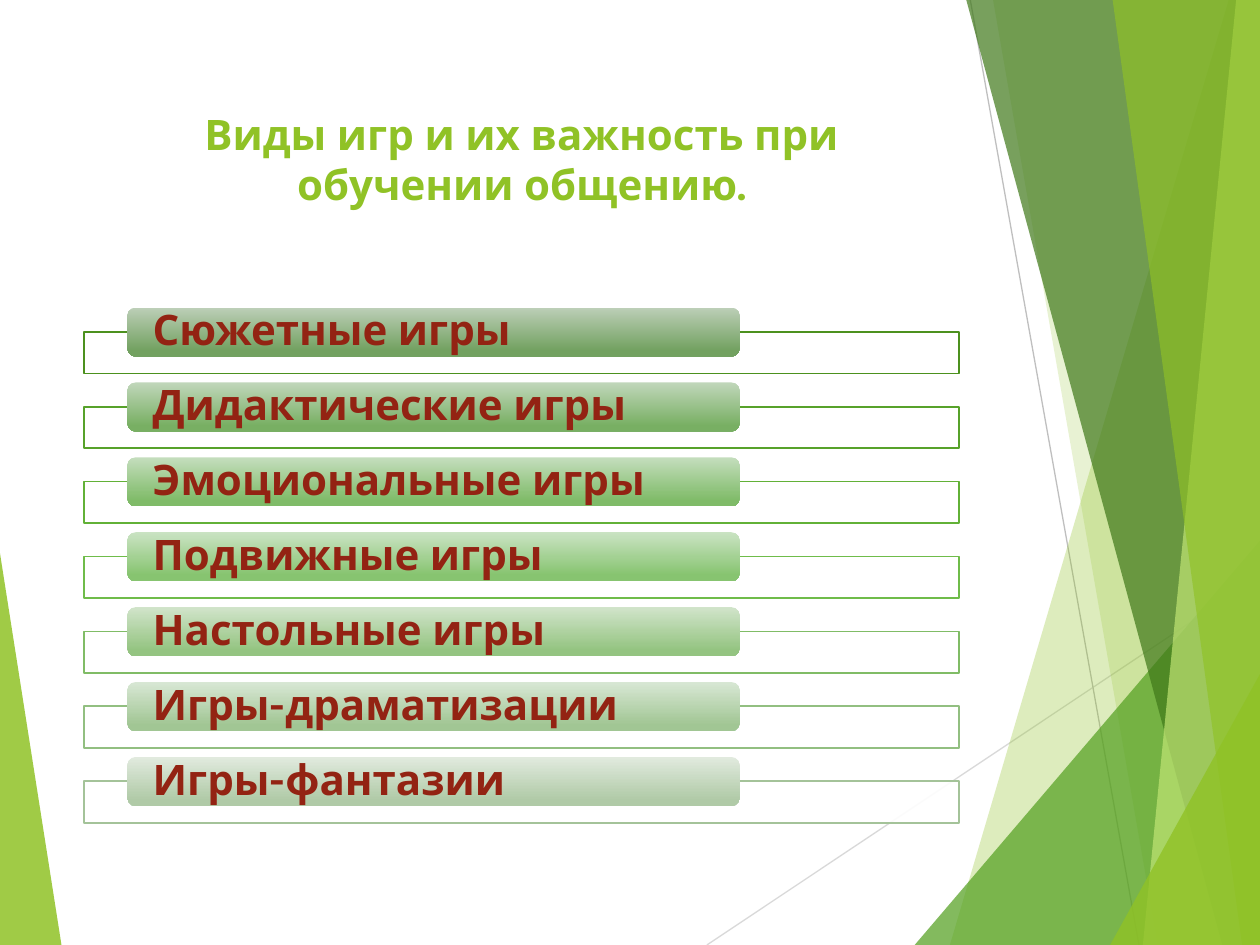
import pptx
import pptx.util
import pptx.dml.color
import pptx.enum.shapes
import pptx.enum.text
import pptx.oxml
import pptx.oxml.ns
from pptx.util import Cm

WIDTH, HEIGHT = 25.4, 19.05

THEME = {
    "font": "Karla",
    "size": 24,
    "title": "90C226",
    "bar_text": "932313",
    "frame": "FFFFFF",
    "lime": "90C226",
    "green": "54A021",
    "forest": "3F7819",
    "pale": "C0E474",
    "light_line": "D9D9D9",
    "grey_line": "BFBFBF",
    "thin": 0.75,
    "outline": 1,
}

TITLE = "Виды игр и их важность при обучении общению."

GAMES = [
    ("Сюжетные игры", "4C911E", "BDCFB8", "72A160"),
    ("Дидактические игры", "57A22A", "C1D7BB", "78AF63"),
    ("Эмоциональные игры", "62B137", "C5DEBE", "7FBB68"),
    ("Подвижные игры", "6FBC4A", "CAE3C3", "87C470"),
    ("Настольные игры", "80BC66", "D1E4CA", "94C481"),
    ("Игры-драматизации", "92BF81", "D8E7D4", "A1C694"),
    ("Игры-фантазии", "A4C399", "E1EADE", "B0CAA7"),
]

LEFT_FACET = ([(0, 11.15), (1.24, HEIGHT), (0, HEIGHT)], "lime", 85)

RAYS = [
    ((14.25, HEIGHT), (WIDTH, 11.61), "light_line"),
    ((19.56, 0), (22.96, HEIGHT), "grey_line"),
]


def band(top, bottom):
    return [(top, 0), (bottom, HEIGHT), (WIDTH, HEIGHT), (WIDTH, 0)]


def corner(left, top):
    return [(left, HEIGHT), (WIDTH, top), (WIDTH, HEIGHT)]


RIGHT_FACETS = [
    (band(24.77, 19.15), "lime", 30),
    (band(20.02, 23.34), "lime", 20),
    (corner(18.44, 10.9), "green", 72),
    (band(19.48, 24.64), "forest", 70),
    (band(24.92, 23.04), "pale", 70),
    (band(22.43, 25.04), "lime", 65),
    (corner(22.38, 13.59), "lime", 80),
]

CONTENT_LEFT, CONTENT_WIDTH = 1.7, 17.63
TITLE_TOP, TITLE_HEIGHT, TITLE_BOTTOM_INSET = 1.7, 3.66, 1.14
FIRST_BAR_TOP, ROW_PITCH = 6.2, 1.51
BAR_LEFT, BAR_WIDTH, BAR_HEIGHT = 2.57, 12.34, 0.99
FRAME_OFFSET, FRAME_HEIGHT = 0.49, 0.84


def rgb(value):
    return pptx.dml.color.RGBColor.from_string(value)


def fill_solid(shape, color, opacity):
    shape.shadow.inherit = False
    shape.fill.solid()
    shape.fill.fore_color.rgb = rgb(color)
    color_element = shape.fill._xPr.find(".//" + pptx.oxml.ns.qn("a:srgbClr"))
    alpha = pptx.oxml.parse_xml(
        f'<a:alpha {pptx.oxml.ns.nsdecls("a")} val="{opacity * 1000}"/>'
    )
    color_element.append(alpha)


def format_text(paragraph, color):
    for run in paragraph.runs:
        run.font.name = THEME["font"]
        run.font.size = pptx.util.Pt(THEME["size"])
        run.font.bold = True
        run.font.color.rgb = rgb(color)


def add_facet(slide, points, color, opacity):
    corners = [(Cm(x), Cm(y)) for x, y in points]
    builder = slide.shapes.build_freeform(*corners[0])
    builder.add_line_segments(corners[1:], close=True)
    shape = builder.convert_to_shape()
    fill_solid(shape, THEME[color], opacity)
    shape.line.fill.background()


def add_ray(slide, start, end, color):
    connector = slide.shapes.add_connector(
        pptx.enum.shapes.MSO_CONNECTOR.STRAIGHT, *map(Cm, start + end)
    )
    connector.line.color.rgb = rgb(THEME[color])
    connector.line.width = pptx.util.Pt(THEME["thin"])
    effects = pptx.oxml.parse_xml(f'<a:effectLst {pptx.oxml.ns.nsdecls("a")}/>')
    connector._element.spPr.append(effects)


def set_title(slide):
    title = slide.shapes.title
    title.left, title.top = Cm(CONTENT_LEFT), Cm(TITLE_TOP)
    title.width, title.height = Cm(CONTENT_WIDTH), Cm(TITLE_HEIGHT)
    frame = title.text_frame
    frame.text = TITLE
    frame.word_wrap = True
    frame.auto_size = pptx.enum.text.MSO_AUTO_SIZE.NONE
    frame.vertical_anchor = pptx.enum.text.MSO_ANCHOR.BOTTOM
    frame.margin_bottom = Cm(TITLE_BOTTOM_INSET)
    frame.paragraphs[0].alignment = pptx.enum.text.PP_ALIGN.CENTER
    format_text(frame.paragraphs[0], THEME["title"])


def add_game(slide, top, name, outline, light, dark):
    shapes = pptx.enum.shapes.MSO_SHAPE
    frame = slide.shapes.add_shape(
        shapes.RECTANGLE,
        Cm(CONTENT_LEFT), Cm(top + FRAME_OFFSET), Cm(CONTENT_WIDTH), Cm(FRAME_HEIGHT),
    )
    fill_solid(frame, THEME["frame"], 90)
    frame.line.color.rgb = rgb(outline)
    frame.line.width = pptx.util.Pt(THEME["outline"])

    bar = slide.shapes.add_shape(
        shapes.ROUNDED_RECTANGLE,
        Cm(BAR_LEFT), Cm(top), Cm(BAR_WIDTH), Cm(BAR_HEIGHT),
    )
    bar.shadow.inherit = False
    bar.line.fill.background()
    bar.fill.gradient()
    bar.fill.gradient_angle = 270
    for stop, position, color in zip(bar.fill.gradient_stops, (0, 0.88), (light, dark)):
        stop.position = position
        stop.color.rgb = rgb(color)

    text = bar.text_frame
    text.text = name
    text.word_wrap = True
    text.vertical_anchor = pptx.enum.text.MSO_ANCHOR.MIDDLE
    text.margin_left = text.margin_right = Cm(0.46)
    text.margin_top = text.margin_bottom = 0
    paragraph = text.paragraphs[0]
    paragraph.alignment = pptx.enum.text.PP_ALIGN.LEFT
    paragraph.line_spacing = 0.9
    format_text(paragraph, THEME["bar_text"])


def main():
    presentation = pptx.Presentation()
    presentation.slide_width, presentation.slide_height = Cm(WIDTH), Cm(HEIGHT)
    slide = presentation.slides.add_slide(presentation.slide_layouts[5])
    add_facet(slide, *LEFT_FACET)
    for ray in RAYS:
        add_ray(slide, *ray)
    for facet in RIGHT_FACETS:
        add_facet(slide, *facet)
    set_title(slide)
    for row, game in enumerate(GAMES):
        add_game(slide, FIRST_BAR_TOP + row * ROW_PITCH, *game)
    presentation.save("out.pptx")


if __name__ == "__main__":
    main()
